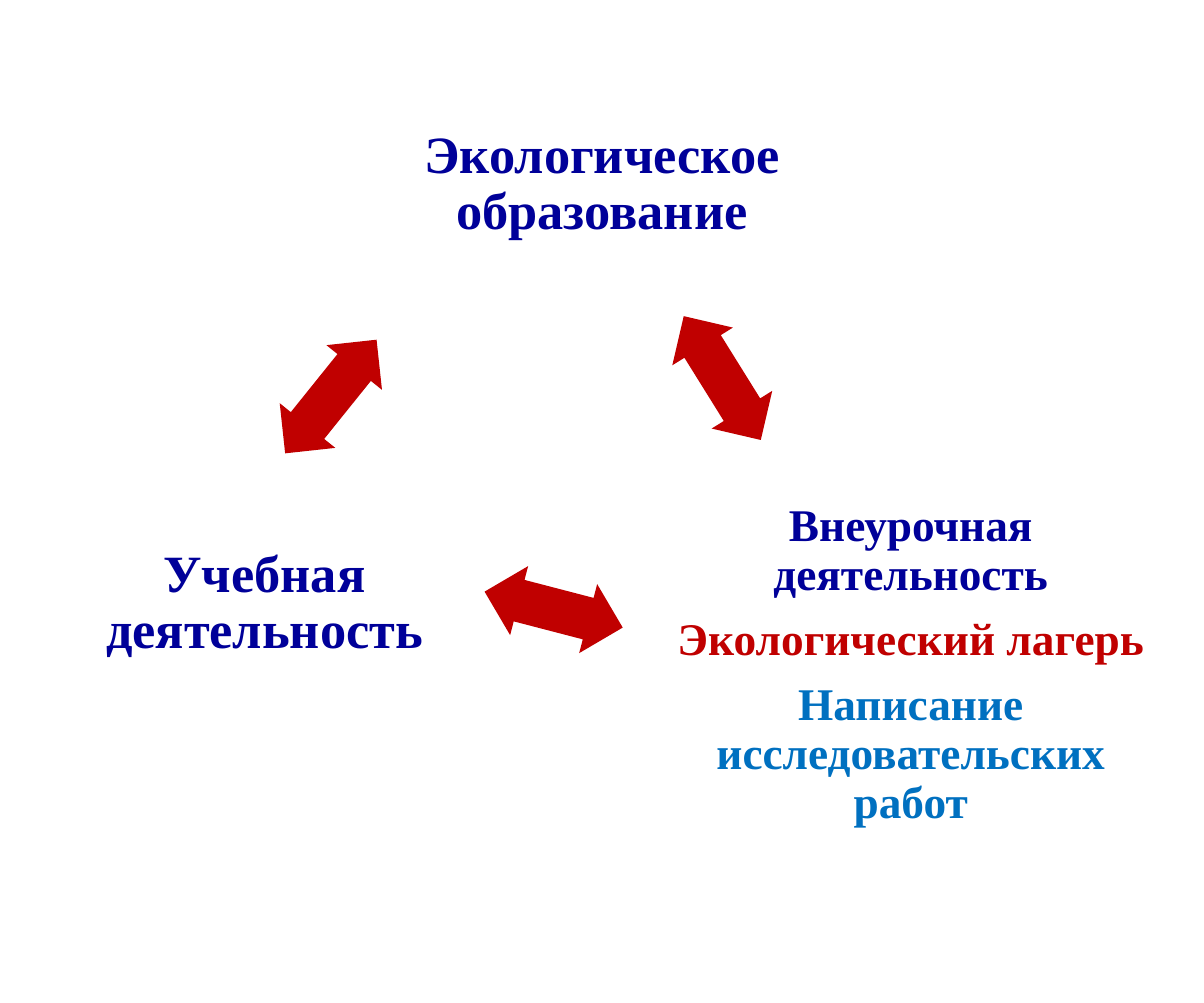
"""Build a slide linking ecological education with study and extracurricular work."""
import pptx
import pptx.dml.color
import pptx.enum.shapes
import pptx.enum.text
import pptx.util

Pt = pptx.util.Pt
RGBColor = pptx.dml.color.RGBColor
Shape = pptx.enum.shapes.MSO_SHAPE
Anchor = pptx.enum.text.MSO_ANCHOR

COLORS = {"white": "FFFFFF", "navy": "000099", "red": "C00000", "blue": "0070C0"}
CARD_WIDTH, CARD_HEIGHT = 288.7, 144
ARROW_HEIGHT = 50.4

cards = [
    (280.8, 58.3, CARD_WIDTH, CARD_HEIGHT, 37, 11, Anchor.MIDDLE,
     [("Экологическое образование", "navy")]),
    (458.6, 331.9, 369.4, 298.1, 32, 14.4, Anchor.TOP,
     [("Внеурочная деятельность", "navy"),
      ("Экологический лагерь", "red"),
      ("Написание исследовательских работ", "blue")]),
    (42.5, 354.2, CARD_WIDTH, CARD_HEIGHT, 37, 11, Anchor.MIDDLE,
     [("Учебная деятельность", "navy")]),
]
arrows = [
    (458.6, 241.9, 103, 58.1),
    (340.6, 405.4, 100.8, 194.6),
    (182.2, 254.9, 103, 308.8),
]

presentation = pptx.Presentation()
presentation.slide_width = Pt(850.32)
presentation.slide_height = Pt(708.48)
slide = presentation.slides.add_slide(presentation.slide_layouts[6])

for left, top, width, height, size, inset, anchor, lines in cards:
    card = slide.shapes.add_shape(
        Shape.ROUNDED_RECTANGLE, Pt(left), Pt(top), Pt(width), Pt(height))
    card.adjustments[0] = 0.1
    card.shadow.inherit = False
    card.fill.solid()
    card.fill.fore_color.rgb = RGBColor.from_string(COLORS["white"])
    card.line.color.rgb = RGBColor.from_string(COLORS["white"])
    card.line.width = Pt(2)
    text_frame = card.text_frame
    text_frame.word_wrap = True
    text_frame.vertical_anchor = anchor
    text_frame.margin_left = text_frame.margin_right = Pt(10)
    text_frame.margin_top = text_frame.margin_bottom = Pt(inset)
    text_frame.text = "\n".join(text for text, color in lines)
    for paragraph, (text, color) in zip(text_frame.paragraphs, lines):
        paragraph.alignment = pptx.enum.text.PP_ALIGN.CENTER
        paragraph.line_spacing = 0.9
        paragraph.space_after = Pt(0.35 * size)
        font = paragraph.runs[0].font
        font.name = "Times New Roman"
        font.size = Pt(size)
        font.bold = True
        font.color.rgb = RGBColor.from_string(COLORS[color])

for left, top, width, rotation in arrows:
    arrow = slide.shapes.add_shape(
        Shape.LEFT_RIGHT_ARROW, Pt(left), Pt(top), Pt(width), Pt(ARROW_HEIGHT))
    arrow.adjustments[0] = 0.6
    arrow.adjustments[1] = 0.5
    arrow.rotation = rotation
    arrow.shadow.inherit = False
    arrow.fill.solid()
    arrow.fill.fore_color.rgb = RGBColor.from_string(COLORS["red"])
    arrow.line.fill.background()

presentation.save("out.pptx")
